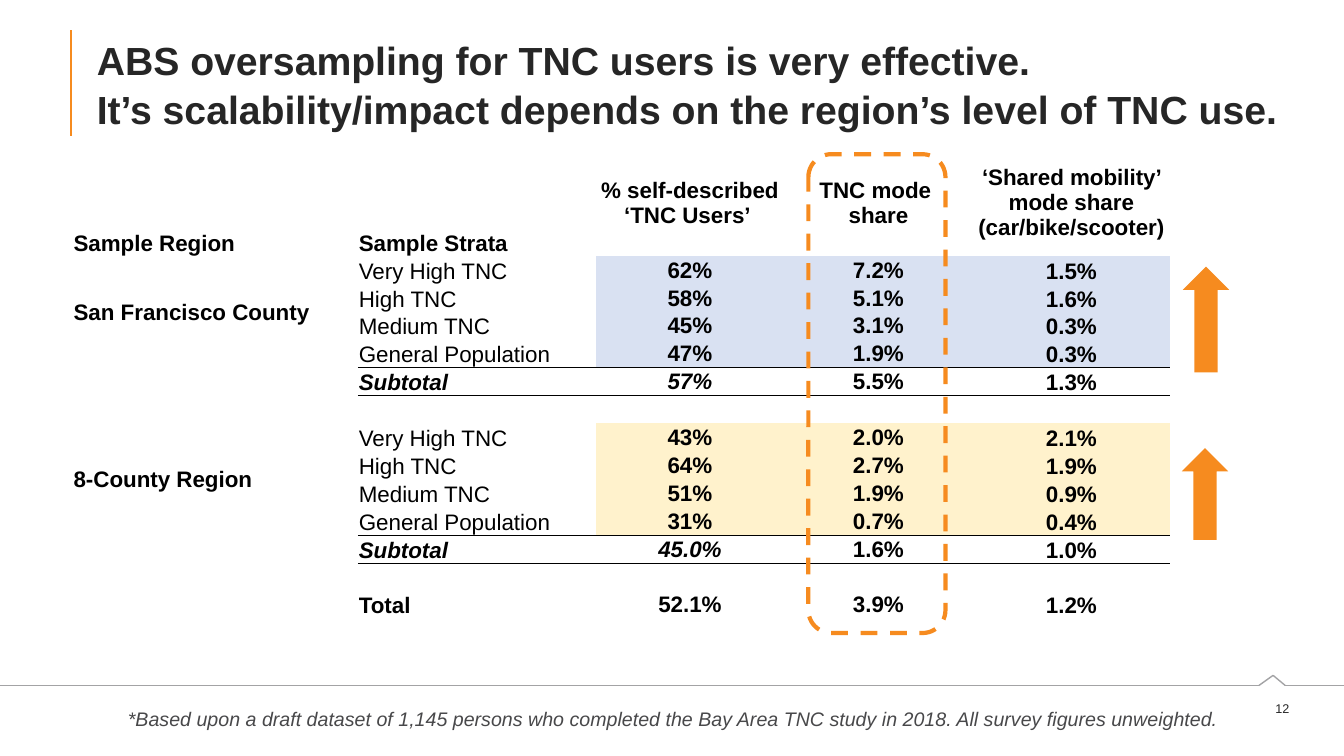
from itertools import pairwise

from lxml import etree
from pptx import Presentation
from pptx.dml.color import RGBColor
from pptx.enum.dml import MSO_LINE
from pptx.enum.shapes import MSO_CONNECTOR, MSO_SHAPE
from pptx.enum.text import MSO_ANCHOR, MSO_AUTO_SIZE, PP_ALIGN
from pptx.oxml.ns import qn
from pptx.util import Pt

STRAIGHT = MSO_CONNECTOR.STRAIGHT
ROUNDED, ARROW = MSO_SHAPE.ROUNDED_RECTANGLE, MSO_SHAPE.RIGHT_ARROW
LEFT, CENTER, RIGHT = PP_ALIGN.LEFT, PP_ALIGN.CENTER, PP_ALIGN.RIGHT
TOP, MIDDLE, BOTTOM = MSO_ANCHOR.TOP, MSO_ANCHOR.MIDDLE, MSO_ANCHOR.BOTTOM
NO_AUTOFIT, DASH = MSO_AUTO_SIZE.NONE, MSO_LINE.DASH
NO_TABLE_STYLE = "{2D5ABB26-0587-4C30-8999-92F81FD0307C}"

ORANGE, GRAY, BLACK, DARK = "F68B1F", "A3A3A5", "000000", "262626"
BLUE_BAND, YELLOW_BAND = "D9E1F2", "FFF2CC"
CELL_SIZE = 16

HEADER = ["Sample Region", "Sample Strata", "% self-described ‘TNC Users’ ",
          "TNC mode \nshare", "‘Shared mobility’ mode share\n(car/bike/scooter)"]
STRATA = ["Very High TNC", "High TNC", "Medium TNC", "General Population"]
REGIONS = [
    ("San Francisco County", BLUE_BAND,
     [("62%", "7.2%", "1.5%"), ("58%", "5.1%", "1.6%"),
      ("45%", "3.1%", "0.3%"), ("47%", "1.9%", "0.3%")],
     ("57%", "5.5%", "1.3%")),
    ("8-County Region", YELLOW_BAND,
     [("43%", "2.0%", "2.1%"), ("64%", "2.7%", "1.9%"),
      ("51%", "1.9%", "0.9%"), ("31%", "0.7%", "0.4%")],
     ("45.0%", "1.6%", "1.0%")),
]
TOTAL = ["", "Total", "52.1%", "3.9%", "1.2%"]


def color(hex_value):
    return RGBColor.from_string(hex_value)


class SlideBuilder:
    """Draws elements on one slide in a shared style; lengths are in points."""

    def __init__(self, slide, font_name):
        self.slide = slide
        self.font_name = font_name

    def add_runs(self, paragraph, text, size, hex_value, bold=False, italic=False, align=LEFT):
        paragraph.alignment = align
        for index, line in enumerate(text.split("\n")):
            if index:
                paragraph.add_line_break()
            run = paragraph.add_run()
            run.text = line
            font = run.font
            font.name, font.size = self.font_name, Pt(size)
            font.bold, font.italic = bold, italic
            font.color.rgb = color(hex_value)

    def title(self, text, left, top, width, height):
        title = self.slide.shapes.title
        title.left, title.top = Pt(left), Pt(top)
        title.width, title.height = Pt(width), Pt(height)
        frame = title.text_frame
        frame.word_wrap = True
        frame.auto_size = NO_AUTOFIT
        frame.vertical_anchor = MIDDLE
        frame.paragraphs[0].line_spacing = 1.05
        self.add_runs(frame.paragraphs[0], text, 28, DARK, bold=True)

    def text(self, text, left, top, width, height, size, hex_value,
             italic=False, align=LEFT, anchor=TOP):
        box = self.slide.shapes.add_textbox(Pt(left), Pt(top), Pt(width), Pt(height))
        frame = box.text_frame
        frame.word_wrap = True
        frame.vertical_anchor = anchor
        self.add_runs(frame.paragraphs[0], text, size, hex_value, italic=italic, align=align)

    def line(self, start, end, hex_value, weight):
        connector = self.slide.shapes.add_connector(
            STRAIGHT, *(Pt(value) for value in (*start, *end)))
        connector.line.color.rgb = color(hex_value)
        connector.line.width = Pt(weight)
        etree.SubElement(connector._element.spPr, qn("a:effectLst"))

    def shape(self, kind, left, top, width, height):
        shape = self.slide.shapes.add_shape(kind, Pt(left), Pt(top), Pt(width), Pt(height))
        shape.shadow.inherit = False
        return shape

    def dashed_frame(self, left, top, width, height):
        frame = self.shape(ROUNDED, left, top, width, height)
        frame.fill.background()
        frame.line.color.rgb = color(ORANGE)
        frame.line.width = Pt(3)
        frame.line.dash_style = DASH

    def up_arrow(self, left, top, width, height):
        arrow = self.shape(ARROW, left, top, width, height)
        arrow.rotation = 270
        arrow.fill.solid()
        arrow.fill.fore_color.rgb = color(ORANGE)
        arrow.line.fill.background()

    def table(self, left, top, column_widths, row_heights):
        frame = self.slide.shapes.add_table(
            len(row_heights), len(column_widths), Pt(left), Pt(top),
            Pt(sum(column_widths)), Pt(sum(row_heights)))
        table = frame.table
        table.first_row = table.horz_banding = False
        table._tbl.tblPr.find(qn("a:tableStyleId")).text = NO_TABLE_STYLE
        for column, width in zip(table.columns, column_widths):
            column.width = Pt(width)
        for row, height in zip(table.rows, row_heights):
            row.height = Pt(height)
        return table

    def cell(self, cell, text, anchor, align, fill=None, border=None, bold=True, italic=False):
        """Fill one table cell; border is the tag of the edge that is ruled."""
        cell.margin_left = cell.margin_right = cell.margin_top = Pt(0.72)
        cell.margin_bottom = 0
        cell.vertical_anchor = anchor
        if border:
            edge = etree.SubElement(cell._tc.get_or_add_tcPr(), qn(border), w=str(Pt(0.5)))
            solid = etree.SubElement(edge, qn("a:solidFill"))
            etree.SubElement(solid, qn("a:srgbClr"), val=BLACK)
        if fill:
            cell.fill.solid()
            cell.fill.fore_color.rgb = color(fill)
        else:
            cell.fill.background()
        paragraph = cell.text_frame.paragraphs[0]
        if text:
            self.add_runs(paragraph, text, CELL_SIZE, BLACK, bold, italic, align)
        else:
            etree.SubElement(paragraph._p, qn("a:endParaRPr"), sz=str(CELL_SIZE * 100))


def table_rows():
    """Return (texts, kind, band colour) for each table row."""
    rows = [(HEADER, "header", None)]
    for region, band, shares, subtotal in REGIONS:
        for index, (stratum, values) in enumerate(zip(STRATA, shares)):
            kind = "last" if stratum == STRATA[-1] else "stratum"
            rows.append(([region if index == 0 else "", stratum, *values], kind, band))
        rows.append((["", "Subtotal", *subtotal], "subtotal", None))
        rows.append(([""] * len(HEADER), "gap", None))
    return rows + [(TOTAL, "total", None)]


def add_share_table(builder):
    rows = table_rows()
    table = builder.table(51.84, 106.56, [203.76, 169.92, 134.64, 134.64, 141.12],
                          [76.32] + [19.1] * (len(rows) - 1))
    rules = {"last": "a:lnB", "subtotal": "a:lnT"}
    for row, (texts, kind, band) in enumerate(rows):
        for column, text in enumerate(texts):
            is_value = column >= 2
            is_header = kind == "header"
            centered = column in (2, 3) or (is_header and is_value) or (column == 0 and not is_header)
            builder.cell(
                table.cell(row, column), text,
                anchor=MIDDLE if centered else BOTTOM,
                align=CENTER if is_value else LEFT,
                fill=band if is_value else None,
                border=rules.get(kind) if column else None,
                bold=not (column == 1 and band),
                italic=kind == "subtotal" and column in (1, 2))
        if band and texts[0]:
            table.cell(row, 0).merge(table.cell(row + len(STRATA) - 1, 0))


def main():
    presentation = Presentation()
    presentation.slide_width, presentation.slide_height = Pt(960), Pt(540)
    builder = SlideBuilder(presentation.slides.add_slide(presentation.slide_layouts[5]), "Arial")

    builder.line((50.4, 21.6), (50.4, 97.2), ORANGE, 1.5)
    footer_rule = [(0, 489.6), (899.28, 489.6), (909.36, 482.4), (918, 489.6), (960, 489.6)]
    for start, end in pairwise(footer_rule):
        builder.line(start, end, GRAY, 1)
    builder.text("12", 887.76, 496.8, 40.32, 18, 9, DARK, align=RIGHT, anchor=MIDDLE)
    builder.title("ABS oversampling for TNC users is very effective.\n"
                  "It’s scalability/impact depends on the region’s level of TNC use.",
                  61.92, 21.6, 861.12, 75.6)

    add_share_table(builder)
    builder.dashed_frame(577.44, 110.16, 97.92, 342)
    builder.text("*Based upon a draft dataset of 1,145 persons who completed the Bay Area TNC study "
                 "in 2018. All survey figures unweighted.",
                 84.24, 501.12, 794.16, 24.48, 14, "48484A", italic=True)
    builder.up_arrow(823.68, 211.68, 75.6, 33.12)
    builder.up_arrow(828, 336.24, 65.52, 33.12)

    presentation.save("out.pptx")


if __name__ == "__main__":
    main()
